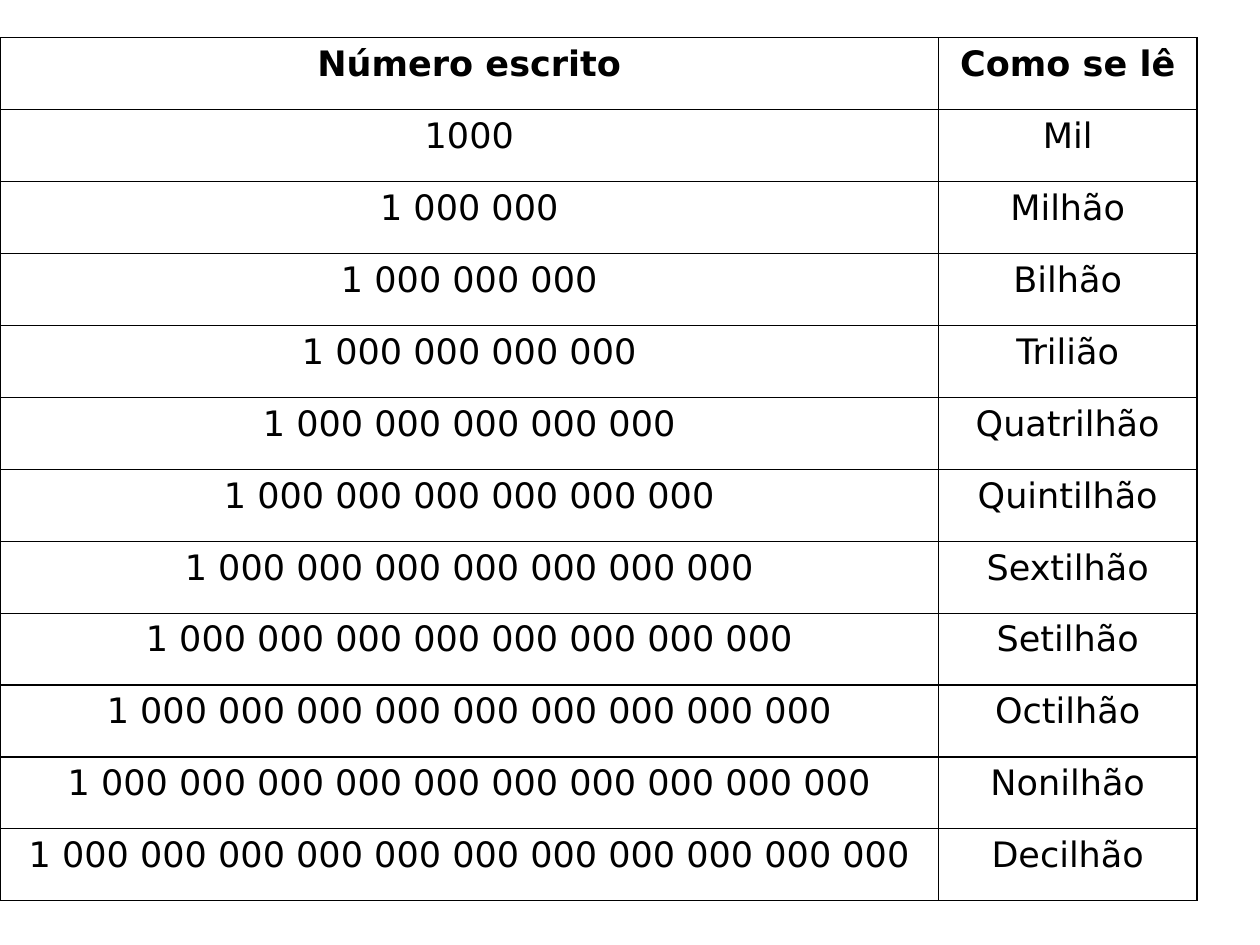
from dataclasses import dataclass

from lxml.etree import SubElement
from pptx import Presentation
from pptx.dml.color import RGBColor
from pptx.enum.text import MSO_ANCHOR, PP_ALIGN
from pptx.oxml.ns import qn
from pptx.util import Cm, Pt

BLACK = RGBColor(0x00, 0x00, 0x00)
BORDER_WIDTH = Pt(0.75)
BORDER_SIDES = ("a:lnL", "a:lnR", "a:lnT", "a:lnB")
COLUMN_WIDTHS = (Cm(18.92), Cm(5.21))
ROW_HEIGHT = Cm(1.45)
TEXT_FORMAT = {"name": "DejaVu Sans", "size": Pt(20)}
LARGE_NUMBERS = (
    "Milhão", "Bilhão", "Trilião", "Quatrilhão", "Quintilhão",
    "Sextilhão", "Setilhão", "Octilhão", "Nonilhão", "Decilhão",
)


@dataclass
class NumberRow:
    written: str
    reading: str
    bold: bool = False


def number_rows() -> list[NumberRow]:
    """Each name after "Mil" has one more group of three zeros."""
    rows = [NumberRow("Número escrito", "Como se lê", bold=True),
            NumberRow("1000", "Mil")]
    for groups, reading in enumerate(LARGE_NUMBERS, start=2):
        rows.append(NumberRow("1" + " 000" * groups, reading))
    return rows


def add_borders(cell) -> None:
    tc_pr = cell._tc.get_or_add_tcPr()
    for side in BORDER_SIDES:
        ln = SubElement(tc_pr, qn(side), w=str(BORDER_WIDTH))
        fill = SubElement(ln, qn("a:solidFill"))
        SubElement(fill, qn("a:srgbClr"), val=str(BLACK))


def fill_cell(cell, text: str, bold: bool) -> None:
    add_borders(cell)
    cell.fill.background()
    cell.vertical_anchor = MSO_ANCHOR.TOP
    p = cell.text_frame.paragraphs[0]
    p.alignment = PP_ALIGN.CENTER
    r = p.add_run()
    r.text = text
    for name, value in TEXT_FORMAT.items():
        setattr(r.font, name, value)
    r.font.bold = bold
    r.font.color.rgb = BLACK


def add_number_table(s, rows: list[NumberRow]) -> None:
    table = s.shapes.add_table(
        len(rows), len(COLUMN_WIDTHS), Cm(0), Cm(0.76),
        sum(COLUMN_WIDTHS), ROW_HEIGHT * len(rows),
    ).table
    table.first_row = table.horz_banding = False
    for column, width in zip(table.columns, COLUMN_WIDTHS):
        column.width = width
    for table_row, row in zip(table.rows, rows):
        table_row.height = ROW_HEIGHT
        for cell, text in zip(table_row.cells, (row.written, row.reading)):
            fill_cell(cell, text, row.bold)


def main() -> None:
    prs = Presentation()
    prs.slide_width, prs.slide_height = Cm(25.4), Cm(19.05)
    s = prs.slides.add_slide(prs.slide_layouts[6])
    add_number_table(s, number_rows())
    prs.save("out.pptx")


if __name__ == "__main__":
    main()
